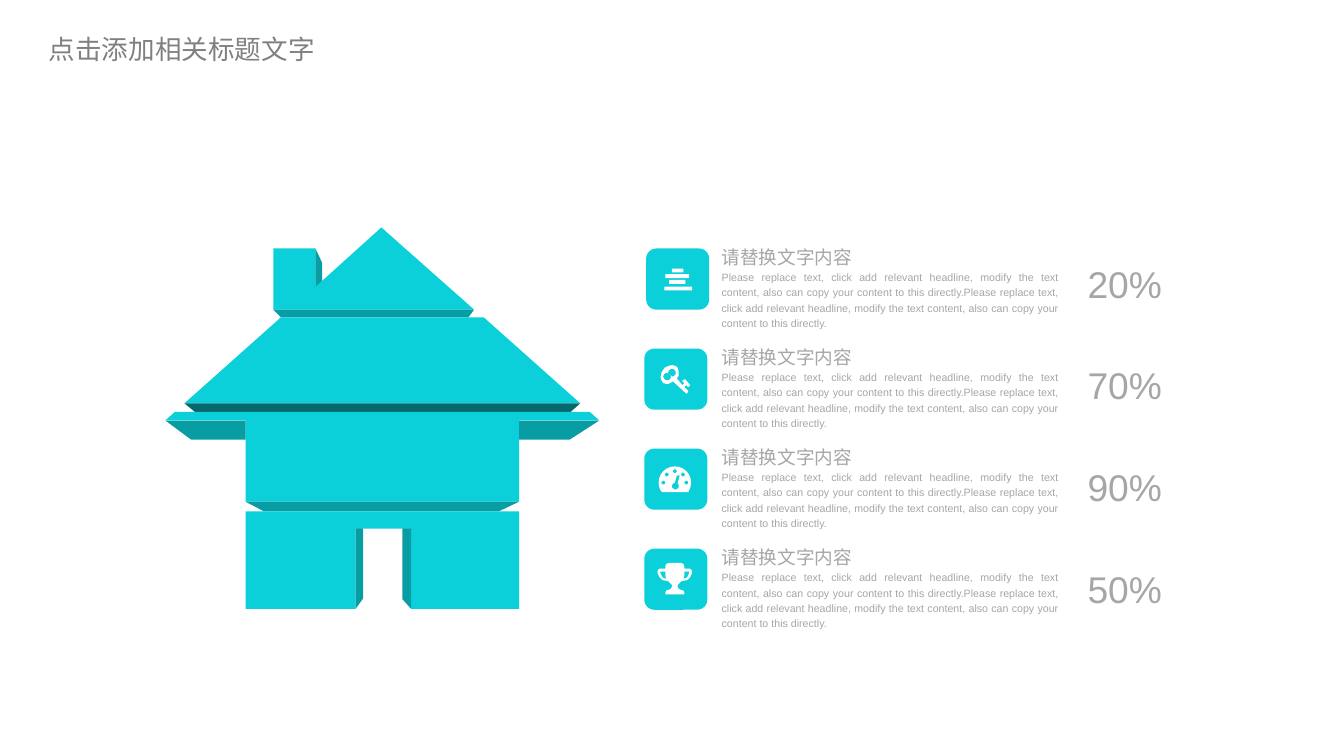
from dataclasses import dataclass
from math import cos, radians, sin

from lxml.etree import SubElement
from pptx import Presentation
from pptx.dml.color import RGBColor as Rgb
from pptx.enum.shapes import MSO_SHAPE as Shape
from pptx.enum.text import MSO_AUTO_SIZE as Fit, PP_ALIGN as Align
from pptx.oxml.ns import qn
from pptx.util import Inches, Pt


@dataclass(frozen=True)
class Theme:
    cyan: str = "0BD0D9"
    shade: str = "089CA3"
    deep: str = "06686C"
    white: str = "FFFFFF"
    title: tuple = (20, "Noto Sans CJK SC", "808080")
    head: tuple = (14, "Arial", "A6A6A6")
    body: tuple = (8, "Arial", "A6A6A6")
    share: tuple = (28, "Arial", "A6A6A6")


class Page:
    def __init__(self, slide, theme):
        self.slide = slide
        self.theme = theme

    def paint(self, shape, color):
        shape.shadow.inherit = False
        shape.fill.solid()
        shape.fill.fore_color.rgb = Rgb.from_string(color)
        shape.line.fill.background()

    def form(self, color, *rings):
        """Draw one filled shape; rings inside the first one are holes."""
        pen = None
        for ring in rings:
            first, *rest = [(Inches(x), Inches(y)) for x, y in ring]
            if pen is None:
                pen = self.slide.shapes.build_freeform(*first, scale=1.0)
            else:
                pen.move_to(*first)
            pen.add_line_segments(rest, close=True)
        self.paint(pen.convert_to_shape(), color)

    def tile(self, *box):
        shape = self.slide.shapes.add_shape(Shape.ROUNDED_RECTANGLE, *map(Inches, box))
        self.paint(shape, self.theme.cyan)

    def text(self, box, lines, align=Align.LEFT, space=1.2, lead=False, wrap=True, inset=(0, 0)):
        """Write (words, style) lines; lead adds a fifth of a line above each."""
        frame = self.slide.shapes.add_textbox(*map(Inches, box)).text_frame
        frame.margin_left = frame.margin_right = Inches(inset[0])
        frame.margin_top = frame.margin_bottom = Inches(inset[1])
        frame.word_wrap = wrap
        frame.auto_size = Fit.SHAPE_TO_FIT_TEXT
        for i, (words, (size, face, color)) in enumerate(lines):
            para = frame.add_paragraph() if i else frame.paragraphs[0]
            para.text = words
            para.alignment = align
            para.line_spacing = space
            font = para.font
            font.size, font.name = Pt(size), face
            font.color.rgb = Rgb.from_string(color)
            if lead:
                para.space_before = Pt(0)
                gap = para._p.pPr.find(qn("a:spcBef"))
                gap.remove(gap[0])
                SubElement(gap, qn("a:spcPct"), val="20000")
        return frame


def arc(x, y, r, start=0, end=345, step=15):
    """Points on a circle, by clockwise degrees from the right."""
    turns = [radians(a) for a in range(start, end + 1, step)]
    return [(x + r * cos(t), y + r * sin(t)) for t in turns]


def rect(x, y, w, h):
    return [(x, y), (x + w, y), (x + w, y + h), (x, y + h)]


def flip(ring, axis):
    return [(2 * axis - x, y) for x, y in reversed(ring)]


def house(theme):
    """Colour and outline of each face, from roof to door."""
    cyan, shade = theme.cyan, theme.shade
    return [
        (cyan, [(4.96, 3.24), (2.86, 3.24), (2.86, 2.6), (3.3, 2.6), (3.3, 3),
                (3.37, 2.94), (3.99, 2.38)]),
        (shade, [(3.37, 2.94), (3.3, 3), (3.3, 2.6), (3.37, 2.75)]),
        (shade, [(4.9, 3.32), (2.94, 3.32), (2.86, 3.24), (4.96, 3.24)]),
        (cyan, [(6.07, 4.22), (1.93, 4.22), (2.94, 3.32), (5.06, 3.32)]),
        (theme.deep, [(5.97, 4.31), (2.04, 4.31), (1.93, 4.22), (6.07, 4.22)]),
        (cyan, [(1.83, 4.31), (6.17, 4.31), (6.27, 4.4), (5.43, 4.4), (5.43, 5.25),
                (2.57, 5.25), (2.57, 4.4), (1.73, 4.4)]),
        (shade, [(2.57, 4.6), (2, 4.6), (1.73, 4.4), (2.57, 4.4)]),
        (shade, [(5.43, 4.6), (5.43, 4.4), (6.27, 4.4), (5.96, 4.6)]),
        (shade, [(5.22, 5.35), (2.76, 5.35), (2.57, 5.25), (5.43, 5.25)]),
        (cyan, [(3.72, 6.37), (2.57, 6.37), (2.57, 5.35), (5.43, 5.35), (5.43, 6.37),
                (4.3, 6.37), (4.3, 5.53), (3.72, 5.53)]),
        (shade, [(4.3, 6.37), (4.21, 6.27), (4.21, 5.53), (4.3, 5.53)]),
        (shade, [(3.72, 6.37), (3.72, 5.53), (3.8, 5.53), (3.8, 6.26)]),
    ]


def bars():
    rows = [(7.03, 2.81, 0.12), (6.96, 2.87, 0.25), (7, 2.93, 0.17), (6.95, 3, 0.29)]
    return [rect(x, y, w, 0.04) for x, y, w in rows]


def key():
    edge = [(7.2, 4.05), (7.18, 4.03), (7.16, 4.05), (7.2, 4.09), (7.2, 4.1), (7.18, 4.12),
            (7.17, 4.11), (7.04, 3.99), (7.01, 4.01), (6.98, 4.02), (6.94, 4.01),
            (6.92, 3.98), (6.91, 3.95), (6.92, 3.9), (6.95, 3.85), (6.99, 3.83),
            (7.03, 3.82), (7.07, 3.83), (7.09, 3.85), (7.1, 3.89), (7.1, 3.93),
            (7.08, 3.96), (7.14, 4.03), (7.16, 4.01), (7.14, 3.99), (7.14, 3.98),
            (7.16, 3.97), (7.17, 3.97), (7.22, 4.03)]
    hole = arc(7.03, 3.9, 0.04, 165, 450) + arc(6.98, 3.94, 0.04, -30, 270)
    return [edge, hole]


def gauge():
    x, y = 7.06, 5.05
    dome = arc(x, y, 0.17, 150, 390) + [(7.2, 5.15), (6.93, 5.15)]
    dots = [arc(*spot, 0.02) for spot in arc(x, y, 0.12, 180, 360, 45)]
    hand = [(7.11, 4.98), (7.1, 4.97), (7.08, 4.98), (7.06, 5.05), (7.04, 5.06), (7.03, 5.08),
            (7.03, 5.1), (7.05, 5.12), (7.08, 5.12), (7.1, 5.1), (7.1, 5.07), (7.09, 5.06)]
    return [dome, *dots, hand]


def cup():
    axis = 7.06
    half = [(7.12, 5.89), (7.15, 5.9), (7.16, 5.93), (7.16, 5.95), (7.22, 5.95),
            (7.24, 5.97), (7.24, 6), (7.22, 6.04), (7.19, 6.07), (7.13, 6.08),
            (7.11, 6.1), (7.09, 6.12), (7.09, 6.14), (7.1, 6.16), (7.12, 6.17),
            (7.15, 6.18), (7.16, 6.2), (7.16, 6.22)]
    grip = [(7.16, 5.98), (7.21, 5.98), (7.21, 6), (7.19, 6.04), (7.15, 6.06), (7.16, 6.02)]
    return [half + flip(half, axis), grip, flip(grip, axis)]


HEAD = "请替换文字内容"
PLEA = ("Please replace text, click add relevant headline, modify the text content, "
        "also can copy your content to this directly.")
ROWS = [(6.76, bars, "20%"), (6.74, key, "70%"), (6.74, gauge, "90%"), (6.74, cup, "50%")]


def main():
    deck = Presentation()
    deck.slide_width, deck.slide_height = Inches(14.06), Inches(7.91)
    theme = Theme()
    page = Page(deck.slides.add_slide(deck.slide_layouts[6]), theme)

    for color, ring in house(theme):
        page.form(color, ring)

    for i, (left, icon, share) in enumerate(ROWS):
        drop = i * 3.14 / 3
        page.text((7.55, 2.53 + drop, 3.53, 0.93),
                  [(HEAD, theme.head), (PLEA * 2, theme.body)], Align.JUSTIFY)
        page.text((11.37, 2.64 + i * 3.19 / 3, 0.79, 0.57), [(share, theme.share)],
                  Align.CENTER, lead=True, wrap=False)
        page.tile(left, 2.6 + drop, 0.66, 0.64)
        page.form(theme.white, *icon())

    title = page.text((0.4, 0.29, 3.35, 0.41), [("点击添加相关标题文字", theme.title)],
                      space=1.0, lead=True, inset=(0.11, 0.05))
    title.auto_size = Fit.NONE
    title.paragraphs[0].space_after = Pt(6)
    deck.save("out.pptx")


if __name__ == "__main__":
    main()
